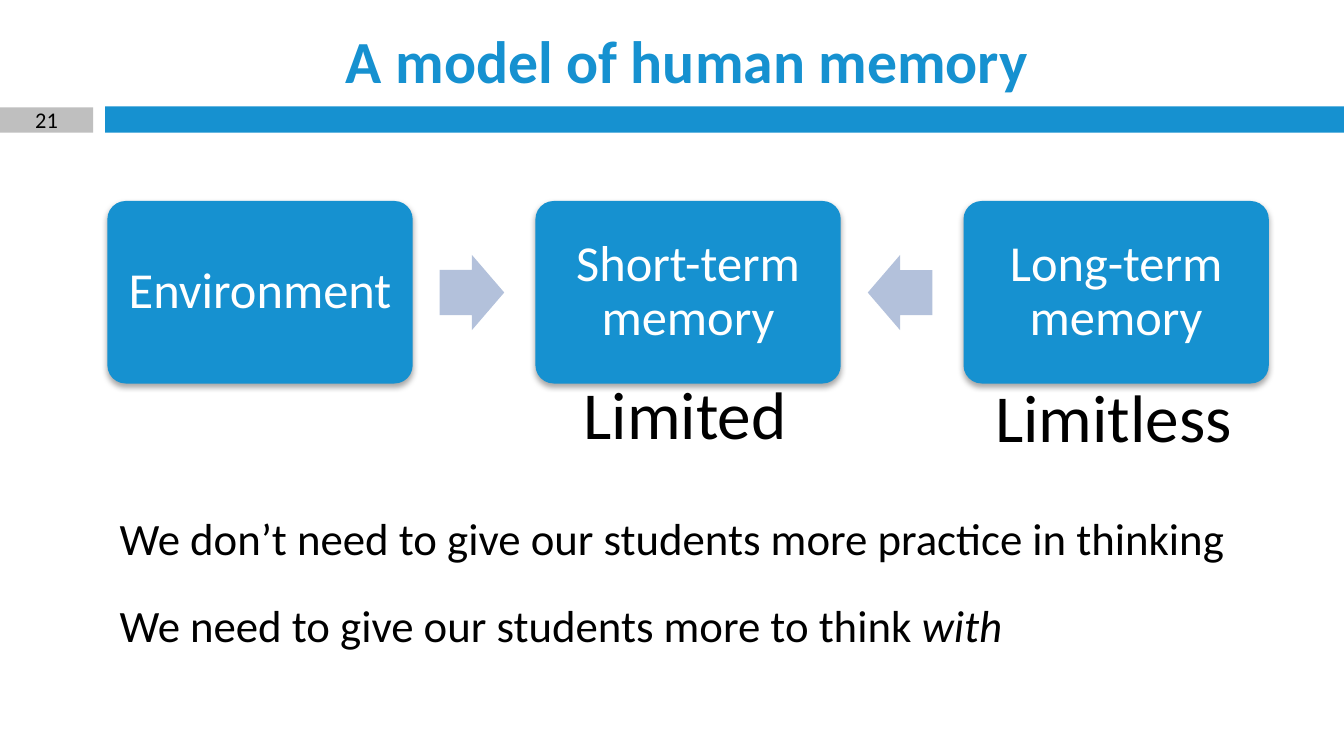
from lxml import etree
from pptx import Presentation
from pptx.dml.color import RGBColor
from pptx.enum.shapes import MSO_SHAPE
from pptx.enum.text import MSO_ANCHOR, PP_ALIGN
from pptx.oxml.ns import qn
from pptx.util import Cm, Pt

BLUE = RGBColor(0x16, 0x91, 0xD0)
PALE = RGBColor(0xB3, 0xC1, 0xDB)
GRAY = RGBColor(0xBF, 0xBF, 0xBF)
BLACK = RGBColor(0, 0, 0)
WHITE = RGBColor(0xFF, 0xFF, 0xFF)

deck = Presentation()
deck.slide_width, deck.slide_height = Cm(25.4), Cm(14.29)
slide = deck.slides.add_slide(deck.slide_layouts[6])


def write(text, shape=None, at=None, size=24, color=BLACK, bold=None,
          italic=None, align=PP_ALIGN.CENTER, anchor=MSO_ANCHOR.TOP):
    """Append a run to a shape, or to a new text box placed at `at`."""
    if shape is None:
        shape = slide.shapes.add_textbox(*map(Cm, at))
    frame = shape.text_frame
    frame.word_wrap = True
    frame.vertical_anchor = anchor
    para = frame.paragraphs[0]
    para.alignment = align
    run = para.add_run()
    run.text = text
    font = run.font
    font.name, font.size, font.color.rgb = "Calibri", Pt(size), color
    font.bold, font.italic = bold, italic
    return shape


def draw(kind, at, fill):
    shape = slide.shapes.add_shape(kind, *map(Cm, at))
    shape.shadow.inherit = False
    shape.fill.solid()
    shape.fill.fore_color.rgb = fill
    shape.line.fill.background()
    return shape


# Header: title, bar and slide number
draw(MSO_SHAPE.RECTANGLE, (1.99, 2.01, 23.41, 0.5), BLUE)
badge = draw(MSO_SHAPE.RECTANGLE, (0, 2.03, 1.76, 0.48), GRAY)
badge.text_frame.margin_top = badge.text_frame.margin_bottom = 0
write("21", badge, size=12, anchor=MSO_ANCHOR.MIDDLE)
write("A model of human memory", at=(1.99, 0.48, 22, 1.3), size=32,
      color=BLUE, bold=True, anchor=MSO_ANCHOR.MIDDLE)

# Three boxes in a row, with soft shadows
LEFT, STEP = 2.03, 8.09
for i, name in enumerate(("Environment", "Short-term memory", "Long-term memory")):
    box = draw(MSO_SHAPE.ROUNDED_RECTANGLE, (LEFT + i * STEP, 3.8, 5.77, 3.45), BLUE)
    box.adjustments[0] = 0.1
    frame = box.text_frame
    frame.margin_left = frame.margin_right = Cm(0.1)
    write(name, box, size=27, color=WHITE, anchor=MSO_ANCHOR.MIDDLE)
    frame.paragraphs[0].line_spacing = 0.9
    effects = box.element.spPr.find(qn("a:effectLst"))
    shade = etree.SubElement(effects, qn("a:outerShdw"), blurRad="40000",
                             dist="23000", dir="5400000", rotWithShape="0")
    tint = etree.SubElement(shade, qn("a:srgbClr"), val="000000")
    etree.SubElement(tint, qn("a:alpha"), val="35000")

# Arrows that point to the middle box
for i, turn in enumerate((0, 180)):
    arrow = draw(MSO_SHAPE.RIGHT_ARROW, (LEFT + 6.28 + i * STEP, 4.82, 1.22, 1.42), PALE)
    arrow.adjustments[0], arrow.adjustments[1] = 0.6, 0.5
    arrow.rotation = turn

# Labels under the boxes
write("Limited", at=(10.65, 6.91, 4.6, 2.57), size=36)
write("Limitless", at=(17.5, 6.97, 7.09, 2.57), size=36)

# Closing lines
write("We don’t need to give our students more practice in thinking",
      at=(2.01, 9.53, 22, 1.27), align=PP_ALIGN.LEFT)
last = write("We need to give our students more to think ",
             at=(2.01, 11.18, 20.24, 1.27), align=PP_ALIGN.LEFT)
write("with", last, italic=True, align=PP_ALIGN.LEFT)

deck.save("out.pptx")
